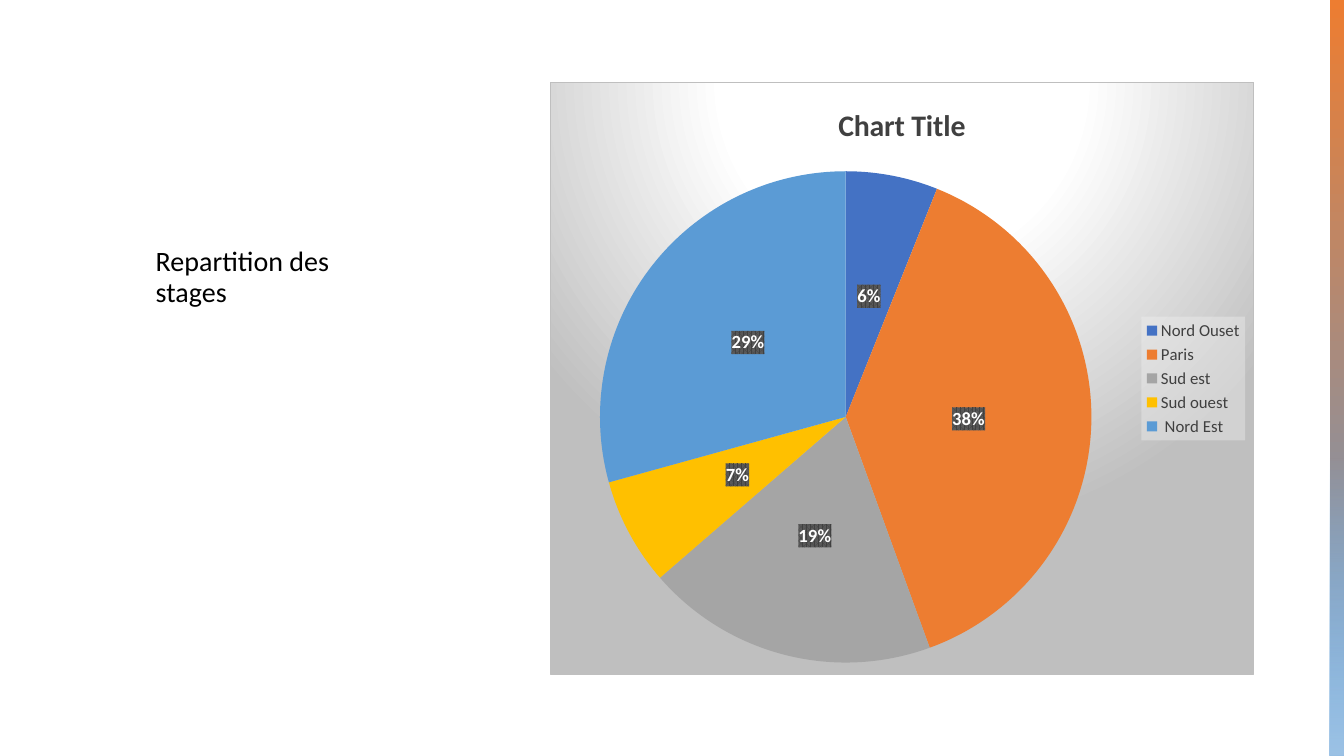
from lxml.etree import fromstring
from pptx import Presentation
from pptx.chart.data import CategoryChartData
from pptx.dml.color import RGBColor
from pptx.enum.chart import XL_CHART_TYPE as ChartType
from pptx.enum.chart import XL_LABEL_POSITION as LabelPosition
from pptx.enum.chart import XL_LEGEND_POSITION as LegendPosition
from pptx.enum.shapes import MSO_SHAPE as Shape
from pptx.enum.text import MSO_ANCHOR as Anchor
from pptx.enum.text import PP_ALIGN as Align
from pptx.util import Emu, Pt

NAMESPACES = (
    'xmlns:a="http://schemas.openxmlformats.org/drawingml/2006/main" '
    'xmlns:c="http://schemas.openxmlformats.org/drawingml/2006/chart"'
)
REGIONS = [
    ("Nord Ouset", 6, "4472C4"),
    ("Paris", 38, "ED7D31"),
    ("Sud est", 19, "A5A5A5"),
    ("Sud ouest", 7, "FFC000"),
    (" Nord Est", 29, "5B9BD5"),
]
VERTICAL = '<a:lin ang="5400000" scaled="0"/>'
SPOTLIGHT = '<a:path path="circle"><a:fillToRect l="50000" t="-80000" r="50000" b="180000"/></a:path>'


def px(length):
    return Emu(round(length * 914400 / 100.8))


def color(value):
    return RGBColor.from_string(value)


def element(tag, content="", attributes=""):
    return fromstring(f"<{tag} {NAMESPACES} {attributes}>{content}</{tag}>")


def gradient(stops, direction):
    """Gradient fill XML from (percent, colour, opacity percent) stops."""
    marks = "".join(
        f'<a:gs pos="{at * 1000}"><a:srgbClr val="{value}">'
        f'<a:alpha val="{opacity * 1000}"/></a:srgbClr></a:gs>'
        for at, value, opacity in stops
    )
    return f'<a:gradFill {NAMESPACES} rotWithShape="1"><a:gsLst>{marks}</a:gsLst>{direction}</a:gradFill>'


class SlideBuilder:
    font = "Calibri"
    soft = "404040"

    def __init__(self, slide):
        self.slide = slide

    def style(self, font, size, value, bold=False):
        font.name, font.size, font.bold = self.font, Pt(size), bold
        font.color.rgb = color(value)

    def shape(self, kind, left, top, width, height):
        shape = self.slide.shapes.add_shape(kind, px(left), px(top), px(width), px(height))
        shape.shadow.inherit = False
        shape.fill.background()
        shape.line.fill.background()
        return shape

    def caption(self, text, *area):
        frame = self.shape(Shape.OVAL, *area).text_frame
        frame.word_wrap = True
        frame.vertical_anchor = Anchor.TOP
        frame.margin_right = px(20)
        para = frame.paragraphs[0]
        para.text = text
        para.alignment = Align.LEFT
        para.line_spacing = 0.9
        para.space_after = Pt(6)
        self.style(para.font, 20, "000000")

    def gradient_bar(self, stops, *area):
        properties = self.shape(Shape.RECTANGLE, *area).element.spPr
        empty_fill = properties.xpath("./a:noFill")[0]
        properties.replace(empty_fill, fromstring(gradient(stops, VERTICAL)))

    def pie(self, title, regions, left, top, width, height):
        names, values, fills = zip(*regions)
        data = CategoryChartData()
        data.categories = names
        data.add_series("Series 1", values)
        chart = self.slide.shapes.add_chart(
            ChartType.PIE, px(left), px(top), px(width), px(height), data
        ).chart
        self.style(chart.font, 10, "000000")

        chart.has_title = True
        para = chart.chart_title.text_frame.paragraphs[0]
        para.text = title
        self.style(para.font, 21.3, self.soft, bold=True)
        chart.chart_title.include_in_layout = False

        chart.has_legend = True
        chart.legend.position = LegendPosition.RIGHT
        chart.legend.include_in_layout = False
        self.style(chart.legend.font, 12, self.soft)

        plot = chart.plots[0]
        plot.vary_by_categories = True
        for index, value in enumerate(fills):
            fill = plot.series[0].points[index].format.fill
            fill.solid()
            fill.fore_color.rgb = color(value)
        plot.has_data_labels = True
        labels = plot.data_labels
        labels.show_value, labels.show_percentage = False, True
        labels.number_format, labels.number_format_is_linked = "0%", False
        labels.position = LabelPosition.CENTER
        self.style(labels.font, 13.3, "FFFFFF", bold=True)
        self.decorate(chart.element)

    def decorate(self, space):
        """Add the backgrounds and pie position that need chart XML."""
        spotlight = gradient([(0, "FFFFFF", 100), (39, "FFFFFF", 100), (100, "BFBFBF", 100)], SPOTLIGHT)
        border = '<a:ln w="9525"><a:solidFill><a:srgbClr val="BFBFBF"/></a:solidFill></a:ln>'
        veil = '<a:solidFill><a:srgbClr val="F2F2F2"><a:alpha val="39000"/></a:srgbClr></a:solidFill>'
        hatch = (
            '<a:pattFill prst="pct75"><a:fgClr><a:srgbClr val="404040"/></a:fgClr>'
            '<a:bgClr><a:srgbClr val="595959"/></a:bgClr></a:pattFill>'
        )
        backgrounds = {
            "./c:txPr": spotlight + border,
            ".//c:legend/c:txPr": veil,
            ".//c:dLbls/c:txPr": hatch,
        }
        for target, content in backgrounds.items():
            space.xpath(target)[0].addprevious(element("c:spPr", content))
        space.xpath("./c:chart")[0].addprevious(element("c:roundedCorners", attributes='val="0"'))

        place = '<c:layoutTarget val="inner"/><c:xMode val="edge"/><c:yMode val="edge"/>'
        place += "".join(
            f'<c:{name} val="{share}"/>'
            for name, share in (("x", 0.07), ("y", 0.15), ("w", 0.7), ("h", 0.83))
        )
        area = space.xpath(".//c:plotArea")[0]
        for layout in area.xpath("./c:layout"):
            area.remove(layout)
        area.insert(0, element("c:layout", f"<c:manualLayout>{place}</c:manualLayout>"))


def main():
    deck = Presentation()
    deck.slide_width, deck.slide_height = px(1344), px(756)
    page = SlideBuilder(deck.slides.add_slide(deck.slide_layouts[6]))
    page.caption("Repartition des stages", 90, 187, 381, 380)
    page.gradient_bar([(0, "ED7D31", 100), (100, "5B9BD5", 100)], 1330, 0, 14, 756)
    page.gradient_bar([(19, "9DC3E6", 0), (100, "9DC3E6", 100)], 1330, 389, 14, 367)
    page.pie("Chart Title", REGIONS, 550, 82, 704, 593)
    deck.save("out.pptx")


if __name__ == "__main__":
    main()
